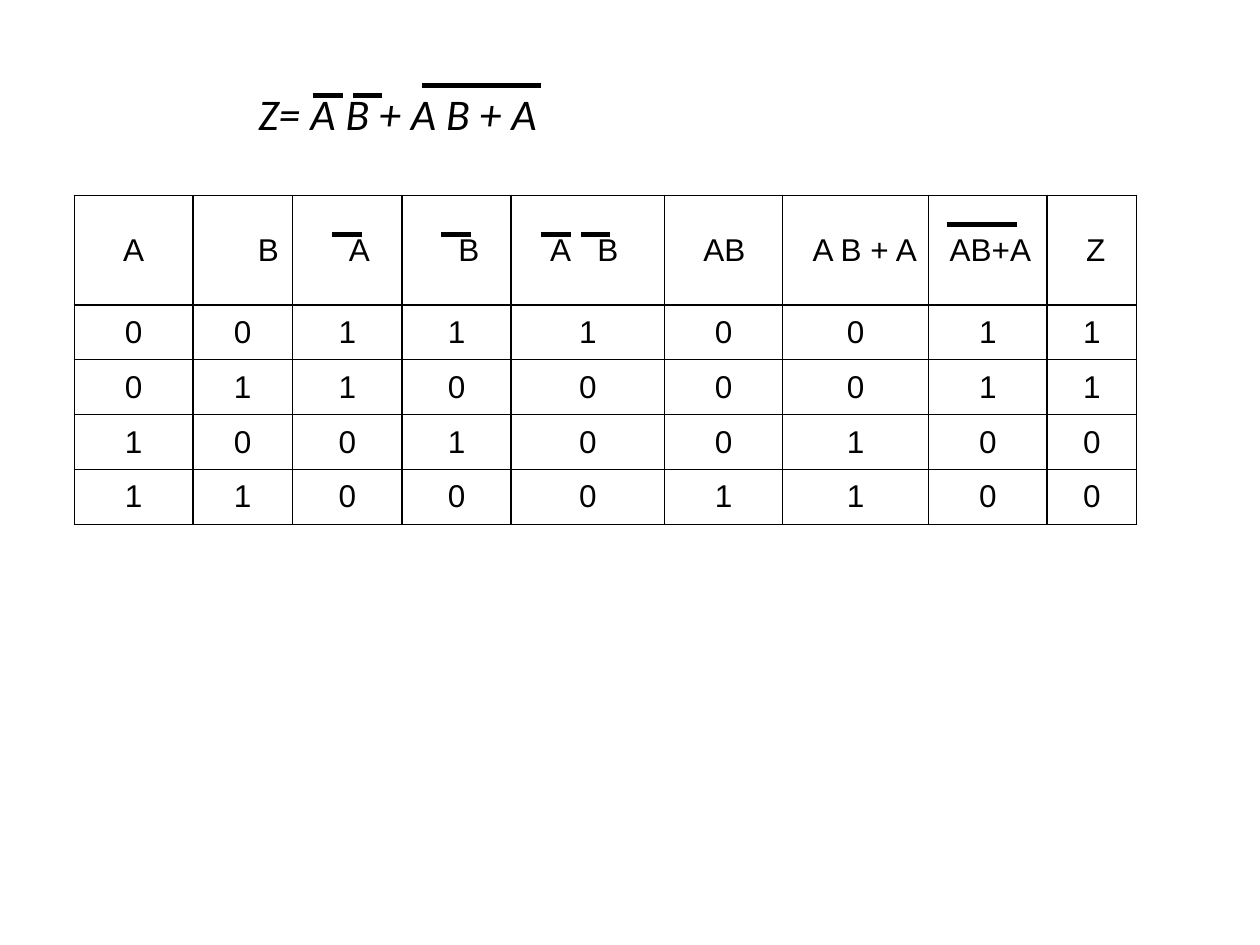
from lxml import etree
from pptx import Presentation
from pptx.dml.color import RGBColor
from pptx.enum.shapes import MSO_CONNECTOR
from pptx.enum.text import MSO_ANCHOR, MSO_AUTO_SIZE, PP_ALIGN
from pptx.oxml import parse_xml
from pptx.oxml.ns import nsdecls, qn
from pptx.util import Pt

LEFT, CENTER = PP_ALIGN.LEFT, PP_ALIGN.CENTER
MIDDLE = MSO_ANCHOR.MIDDLE
NO_AUTOFIT = MSO_AUTO_SIZE.NONE
STRAIGHT = MSO_CONNECTOR.STRAIGHT
TITLE_ONLY = 5
COLORS = {"ink": "000000", "paper": "FFFFFF"}

# Header text, left margin (None: centred)
HEADERS = [("A", None), ("B", 37.2), ("A", 32.2), ("B", 32.2), ("A\tB", 22.2),
           ("AB", 22.2), ("A B + A", 17.2), ("AB+A", 12.2), ("Z", 22.2)]
TRUTH_ROWS = ["001110011", "011000011", "100100100", "110001100"]
COLUMN_WIDTHS = [67.7, 57, 62.6, 62.4, 87.6, 67.5, 83.3, 67.9, 51]
HEADER_HEIGHT, ROW_HEIGHT = 62.6, 31.4
HEADER_TAB = 27

# Negation bars: start, end, height on the slide
TITLE_BARS = [(178.6, 195.8, 54.7), (201.6, 218.2, 54.7), (241.2, 308.9, 49)]
HEADER_BARS = [(190, 206.7, 133.9), (252, 269.2, 133.9), (308.9, 326.1, 133.9),
               (332, 348.5, 133.9), (541.4, 581, 128.2)]


def write_text(frame, text, font="Arial", size=18, italic=False, align=LEFT, tab=None):
    para = frame.paragraphs[0]
    para.alignment = align
    if tab:
        tabs = etree.SubElement(para._p.get_or_add_pPr(), qn("a:tabLst"))
        etree.SubElement(tabs, qn("a:tab"), pos=str(Pt(tab)), algn="l")
    span = para.add_run()
    span.text = text
    span.font.name = font
    span.font.size = Pt(size)
    span.font.italic = italic
    span.font.color.rgb = RGBColor.from_string(COLORS["ink"])


class TruthTablePage:
    def __init__(self, deck):
        self.page = deck.slides.add_slide(deck.slide_layouts[TITLE_ONLY])
        self.ink = RGBColor.from_string(COLORS["ink"])
        self.paper = RGBColor.from_string(COLORS["paper"])
        self.page.background.fill.solid()
        self.page.background.fill.fore_color.rgb = self.paper

    def title(self, text, left, top, width, height):
        box = self.page.shapes.title
        box.left, box.top, box.width, box.height = map(Pt, (left, top, width, height))
        frame = box.text_frame
        frame.auto_size = NO_AUTOFIT
        frame.vertical_anchor = MIDDLE
        write_text(frame, text, font="Calibri", size=25, italic=True)

    def bar(self, start, end, height):
        line = self.page.shapes.add_connector(
            STRAIGHT, Pt(start), Pt(height), Pt(end), Pt(height))
        line.line.color.rgb = self.ink
        line.line.width = Pt(3)
        etree.SubElement(line._element.spPr, qn("a:effectLst"))

    def cell(self, cell, text, margin=None):
        cell.fill.background()
        cell.vertical_anchor = MIDDLE
        if margin is not None:
            cell.margin_left = Pt(margin)
            cell.margin_right = Pt(1)
        write_text(cell.text_frame, text,
                   align=CENTER if margin is None else LEFT,
                   tab=HEADER_TAB if "\t" in text else None)
        properties = cell._tc.get_or_add_tcPr()
        for index, side in enumerate(("lnL", "lnR", "lnT", "lnB")):
            properties.insert(index, parse_xml(
                f'<a:{side} {nsdecls("a")} w="{Pt(1)}"><a:solidFill>'
                f'<a:srgbClr val="{COLORS["ink"]}"/></a:solidFill></a:{side}>'))

    def table(self, left, top):
        heights = [HEADER_HEIGHT] + [ROW_HEIGHT] * len(TRUTH_ROWS)
        table = self.page.shapes.add_table(
            len(heights), len(COLUMN_WIDTHS), Pt(left), Pt(top),
            Pt(sum(COLUMN_WIDTHS)), Pt(sum(heights))).table
        table.first_row = table.horz_banding = False
        for column, width in zip(table.columns, COLUMN_WIDTHS):
            column.width = Pt(width)
        for row, height in zip(table.rows, heights):
            row.height = Pt(height)
        for column, (text, margin) in enumerate(HEADERS):
            self.cell(table.cell(0, column), text, margin)
        for row, digits in enumerate(TRUTH_ROWS, start=1):
            for column, digit in enumerate(digits):
                self.cell(table.cell(row, column), digit)


def main():
    deck = Presentation()
    deck.slide_width, deck.slide_height = Pt(720), Pt(540)
    page = TruthTablePage(deck)

    # Formula
    page.title("Z= A B + A B + A", 140.4, 39.6, 545.8, 50.4)
    for bar in TITLE_BARS:
        page.bar(*bar)

    # Truth table
    page.table(42.5, 111.6)
    for bar in HEADER_BARS:
        page.bar(*bar)

    deck.save("out.pptx")


if __name__ == "__main__":
    main()
